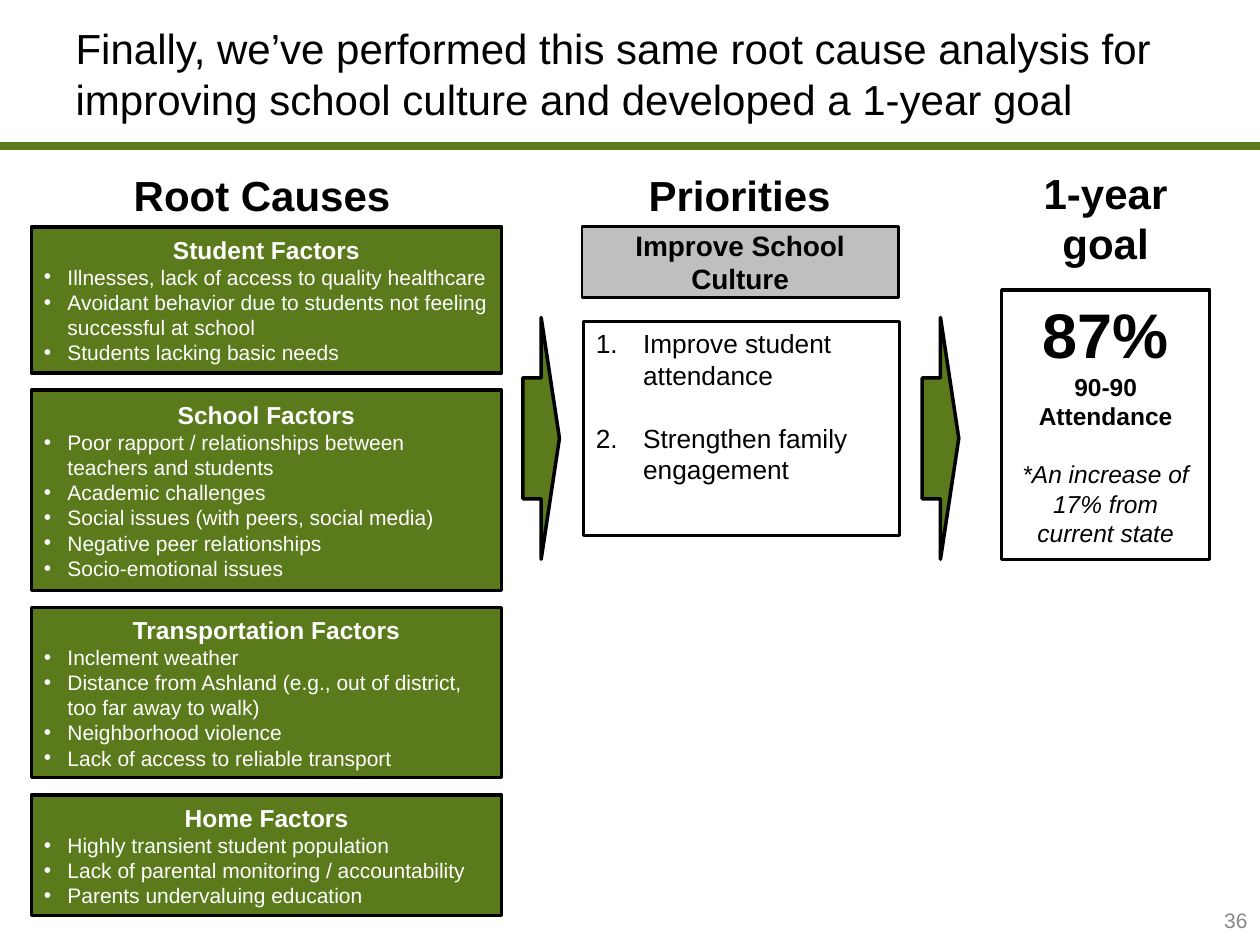
"""Build the school culture slide: root causes, priorities and 1-year goal."""
from dataclasses import dataclass

from lxml.etree import SubElement
from pptx import Presentation
from pptx.dml.color import RGBColor as Color
from pptx.enum.shapes import MSO_CONNECTOR as Connector, MSO_SHAPE as Shape
from pptx.enum.text import MSO_ANCHOR as Anchor, MSO_AUTO_SIZE as AutoSize, PP_ALIGN as Align
from pptx.oxml.ns import qn
from pptx.util import Pt


@dataclass(frozen=True)
class Theme:
    font: str = "Arial"
    green: Color = Color(0x5A, 0x7A, 0x1B)
    gray: Color = Color(0xBF, 0xBF, 0xBF)
    number: Color = Color(0x88, 0x88, 0x88)
    black: Color = Color(0, 0, 0)
    white: Color = Color(0xFF, 0xFF, 0xFF)
    heading: Pt = Pt(24)
    figure: Pt = Pt(36)
    priority: Pt = Pt(16)
    item: Pt = Pt(15)
    label: Pt = Pt(14)
    small: Pt = Pt(12)


theme = Theme()


def write(shape, lines, anchor=Anchor.TOP):
    """Fill a shape with (text, font values, paragraph values, bullet) lines."""
    frame = shape.text_frame
    frame.word_wrap, frame.auto_size, frame.vertical_anchor = True, AutoSize.NONE, anchor
    for index, (text, font, layout, bullet) in enumerate(lines):
        paragraph = frame.paragraphs[0] if index == 0 else frame.add_paragraph()
        paragraph.text = text
        for name, value in layout.items():
            setattr(paragraph, name, value)
        if bullet:
            tag, values, indent = bullet
            properties = paragraph._p.get_or_add_pPr()
            properties.set("marL", str(indent))
            properties.set("indent", str(-indent))
            SubElement(properties, qn("a:buFont"), typeface=theme.font)
            SubElement(properties, qn(tag), **values)
        for run in paragraph.runs:
            run.font.name = theme.font
            run.font.color.rgb = font.get("color", theme.black)
            for name in font.keys() - {"color"}:
                setattr(run.font, name, font[name])


def add_box(kind, place, fill, weight):
    """Add an outlined preset shape without a shadow."""
    shape = slide.shapes.add_shape(kind, *map(Pt, place))
    shape.shadow.inherit = False
    shape.fill.solid()
    shape.fill.fore_color.rgb = fill
    shape.line.color.rgb = theme.black
    shape.line.width = Pt(weight)
    return shape


presentation = Presentation()
presentation.slide_width, presentation.slide_height = Pt(720), Pt(540)
slide = presentation.slides.add_slide(presentation.slide_layouts[5])
center = {"alignment": Align.CENTER}
left = {"alignment": Align.LEFT}

rule = slide.shapes.add_connector(Connector.STRAIGHT, Pt(0), Pt(83.5), Pt(720), Pt(83.5))
rule.line.color.rgb = theme.green
rule.line.width = Pt(5)
SubElement(rule._element.spPr, qn("a:effectLst"))

title = slide.shapes.title
title.left, title.top, title.width, title.height = map(Pt, (36, 0, 648, 83.5))
title_text = ("Finally, we’ve performed this same root cause analysis for "
              "improving school culture and developed a 1-year goal")
write(title, [(title_text, {"size": theme.heading}, left, None)], Anchor.MIDDLE)

heading_font = {"size": theme.heading, "bold": True}
number_font = {"size": theme.small, "color": theme.number}
for text, place, font, align, anchor in [
    ("Root Causes", (54, 93.6, 191.5, 36), heading_font, Align.CENTER, Anchor.TOP),
    ("Priorities", (326.9, 93.6, 191.5, 36), heading_font, Align.CENTER, Anchor.TOP),
    ("1-year\vgoal", (559.4, 92.2, 144.7, 69.1), heading_font, Align.CENTER, Anchor.TOP),
    ("36", (552.2, 511.2, 167.8, 28.8), number_font, Align.RIGHT, Anchor.MIDDLE),
]:
    box = slide.shapes.add_textbox(*map(Pt, place))
    write(box, [(text, font, {"alignment": align}, None)], anchor)

factors = [
    ("Student Factors", 83.5, [
        "Illnesses, lack of access to quality healthcare",
        "Avoidant behavior due to students not feeling successful at school",
        "Students lacking basic needs"]),
    ("School Factors", 114.5, [
        "Poor rapport / relationships between teachers and students",
        "Academic challenges",
        "Social issues (with peers, social media)",
        "Negative peer relationships",
        "Socio-emotional issues"]),
    ("Transportation Factors", 97.2, [
        "Inclement weather",
        "Distance from Ashland (e.g., out of district, too far away to walk)",
        "Neighborhood violence",
        "Lack of access to reliable transport"]),
    ("Home Factors", 69.1, [
        "Highly transient student population",
        "Lack of parental monitoring / accountability",
        "Parents undervaluing education"]),
]
factor_font = {"size": theme.label, "bold": True, "color": theme.white}
cause_font = {"size": theme.small, "color": theme.white}
dot = ("a:buChar", {"char": "•"}, Pt(13.5))
top, gap = 129.6, 9.8
for name, height, causes in factors:
    box = add_box(Shape.RECTANGLE, (18, top, 268.6, height), theme.green, 2)
    lines = [(name, factor_font, center, None)]
    lines += [(cause, cause_font, left, dot) for cause in causes]
    write(box, lines, Anchor.MIDDLE)
    top += height + gap

for arrow_left in (298.8, 527):
    add_box(Shape.RIGHT_ARROW, (arrow_left, 181.4, 20.9, 138.2), theme.green, 2)

priority = add_box(Shape.RECTANGLE, (332.6, 129.6, 180.7, 40.3), theme.gray, 1.5)
priority_font = {"size": theme.priority, "bold": True}
write(priority, [("Improve School Culture", priority_font, center, None)], Anchor.MIDDLE)

actions = add_box(Shape.RECTANGLE, (333.4, 183.6, 180.7, 122.4), theme.white, 1.5)
numbered = ("a:buAutoNum", {"type": "arabicPeriod"}, Pt(27))
item_font = {"size": theme.item}
write(actions, [
    ("Improve student attendance", item_font, left, numbered),
    ("Strengthen family engagement", item_font, {**left, "space_before": Pt(18)}, numbered),
])

goal = add_box(Shape.RECTANGLE, (572.4, 165.6, 118.8, 154.1), theme.white, 2)
write(goal, [
    ("87%", {"size": theme.figure, "bold": True}, center, None),
    ("90-90 Attendance", {"size": theme.label, "bold": True}, center, None),
    ("*An increase of 17% from current state", {"size": theme.label, "italic": True},
     {**center, "space_before": Pt(16.5)}, None),
])

presentation.save("out.pptx")
